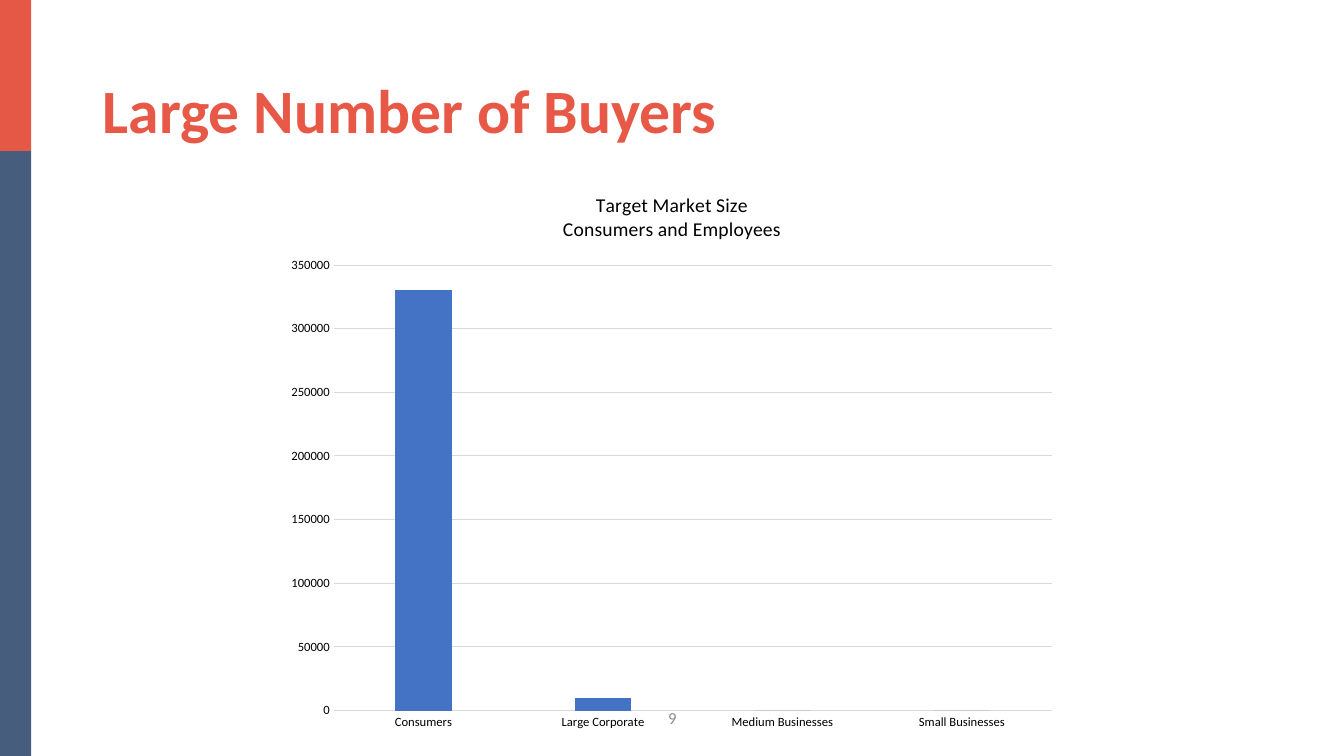
from lxml import etree
from pptx import Presentation
from pptx import util as u
from pptx.chart.data import CategoryChartData
from pptx.dml.color import RGBColor
from pptx.enum import chart as ch, shapes, text

CORAL = RGBColor(0xE6, 0x58, 0x46)
TITLE_CORAL = RGBColor(0xE7, 0x58, 0x46)
SLATE = RGBColor(0x47, 0x5D, 0x7E)
BLUE = RGBColor(0x44, 0x72, 0xC4)
GRID = RGBColor(0xD9, 0xD9, 0xD9)
GREY = RGBColor(0x8C, 0x8C, 0x8C)
BLACK = RGBColor(0, 0, 0)
FONT = "Calibri"

prs = Presentation()
prs.slide_width, prs.slide_height = u.Inches(13.33), u.Inches(7.5)
H = prs.slide_height
s = prs.slides.add_slide(prs.slide_layouts[6])


def style(font, size, color, bold=False):
    font.name, font.size, font.bold = FONT, u.Pt(size), bold
    font.color.rgb = color


def add_text(box, words, size, color, bold, align):
    tf = s.shapes.add_textbox(*[u.Inches(v) for v in box]).text_frame
    tf.word_wrap = True
    tf.vertical_anchor = text.MSO_ANCHOR.MIDDLE
    tf.text = words
    p = tf.paragraphs[0]
    p.alignment = align
    style(p.runs[0].font, size, color, bold)
    return p


# Side band: coral top fifth, slate below
for top, share, color in ((0, 0.2, CORAL), (0.2, 0.8, SLATE)):
    sp = s.shapes.add_shape(shapes.MSO_SHAPE.RECTANGLE, 0, int(H * top),
                            u.Inches(0.31), int(H * share))
    sp.shadow.inherit = False
    sp.fill.solid()
    sp.fill.fore_color.rgb = color
    sp.line.fill.background()

# Title and page number
p = add_text((0.92, 0.4, 11.5, 1.45), "Large Number of Buyers", 44,
             TITLE_CORAL, True, text.PP_ALIGN.LEFT)
p.line_spacing = 0.9
add_text((5.17, 6.92, 3, 0.4), "9", 12, GREY, False, text.PP_ALIGN.CENTER)

# Chart
LEFT, TOP, WIDTH, HEIGHT = 2.74, 1.7, 7.85, 5.65
data = CategoryChartData()
data.categories = ["Consumers", "Large Corporate", "Medium Businesses",
                   "Small Businesses"]
data.add_series("Series 1", (330000, 10000, 0, 0))
chart = s.shapes.add_chart(ch.XL_CHART_TYPE.COLUMN_CLUSTERED, u.Inches(LEFT),
                           u.Inches(TOP), u.Inches(WIDTH), u.Inches(HEIGHT),
                           data).chart
style(chart.font, 10, BLACK)
chart.has_legend = False

# Chart title
chart.has_title = True
tf = chart.chart_title.text_frame
tf.text = "Target Market Size\nConsumers and Employees"
for p in tf.paragraphs:
    style(p.runs[0].font, 14, BLACK)
chart.chart_title.include_in_layout = False

# Columns
plot = chart.plots[0]
plot.vary_by_categories = False
plot.gap_width, plot.overlap = 219, -27
fill = plot.series[0].format.fill
fill.solid()
fill.fore_color.rgb = BLUE

# Axes and gridlines
cat, val = chart.category_axis, chart.value_axis
for axis in (cat, val):
    axis.major_tick_mark = axis.minor_tick_mark = ch.XL_TICK_MARK.NONE
    style(axis.tick_labels.font, 9, BLACK)
val.minimum_scale, val.maximum_scale, val.major_unit = 0, 350000, 50000
val.has_major_gridlines = True
val.format.line.fill.background()
for line in (cat.format.line, val.major_gridlines.format.line):
    line.color.rgb = GRID
    line.width = u.Pt(0.75)

# Plot area as shares of the chart
area = chart._chartSpace.chart.plotArea
C = "{http://schemas.openxmlformats.org/drawingml/2006/chart}"
for old in area.findall(C + "layout"):
    area.remove(old)
layout = etree.Element(C + "layout")
manual = etree.SubElement(layout, C + "manualLayout")
for tag, value in (("layoutTarget", "inner"), ("xMode", "edge"),
                   ("yMode", "edge"), ("x", (3.31 - LEFT) / WIDTH),
                   ("y", (2.63 - TOP) / HEIGHT), ("w", 7.12 / WIDTH),
                   ("h", 4.42 / HEIGHT)):
    etree.SubElement(manual, C + tag).set("val", str(value))
area.insert(0, layout)

prs.save("out.pptx")
